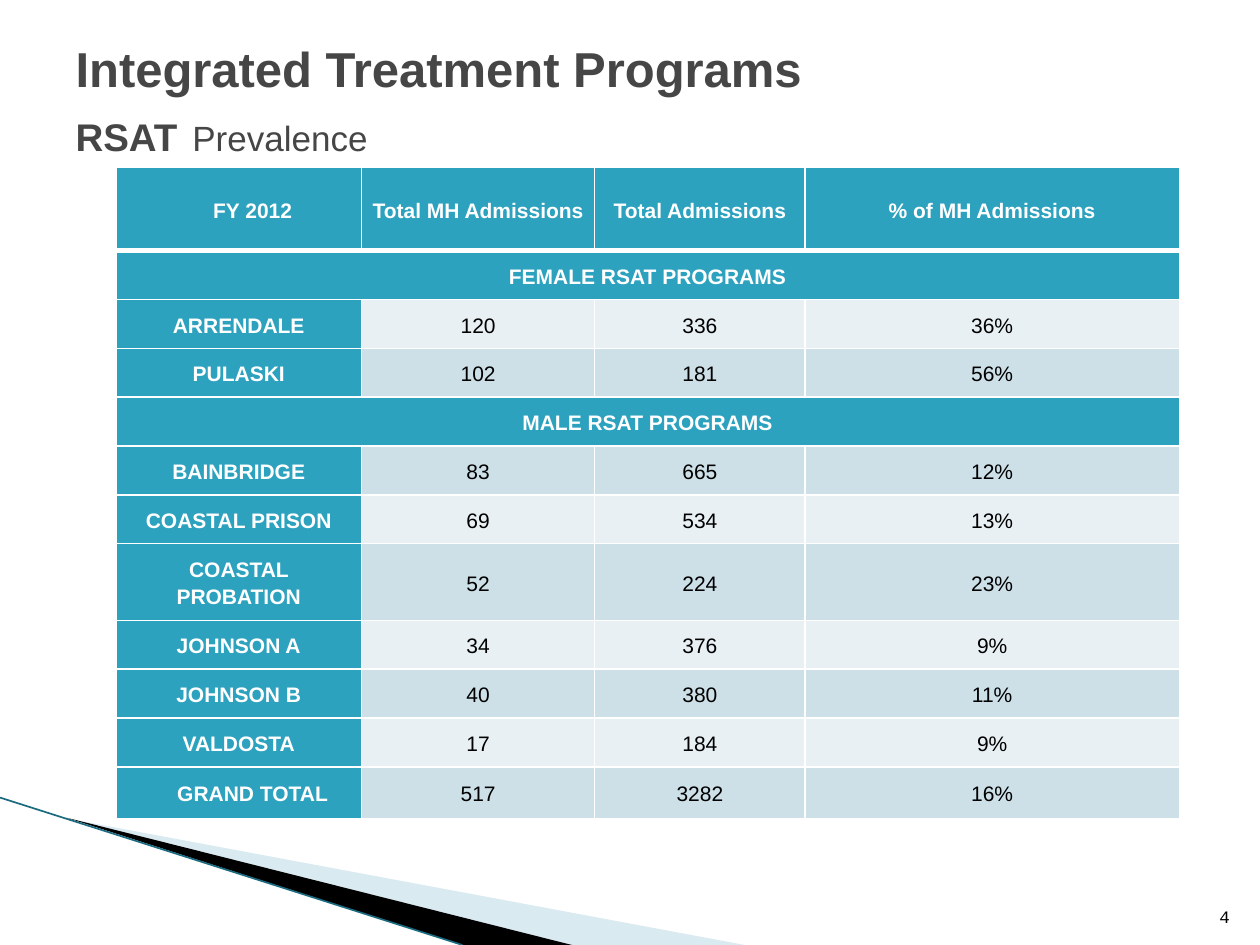
from lxml import etree
from pptx import Presentation
from pptx import util as u
from pptx.dml.color import RGBColor
from pptx.enum import shapes, text
from pptx.oxml.ns import qn

TEAL, WHITE, BLACK = "2DA2BF", "FFFFFF", "000000"
BANDS = ("E8F0F4", "CDE0E8")
COLS = (1.95, 1.85, 1.67, 2.97)
ROWS = (
    ("FY 2012", "Total MH Admissions", "Total Admissions", "% of MH Admissions"),
    ("FEMALE RSAT PROGRAMS",),
    ("ARRENDALE", "120", "336", "36%"),
    ("PULASKI", "102", "181", "56%"),
    ("MALE RSAT PROGRAMS",),
    ("BAINBRIDGE", "83", "665", "12%"),
    ("COASTAL PRISON", "69", "534", "13%"),
    ("COASTAL PROBATION", "52", "224", "23%"),
    ("JOHNSON A", "34", "376", "9%"),
    ("JOHNSON B", "40", "380", "11%"),
    ("VALDOSTA", "17", "184", "9%"),
    ("GRAND TOTAL", "517", "3282", "16%"),
)
HIGH = 5.17
TALL = {0: 0.66, 7: 0.61, 11: 0.41}
INDENTED = ("FY 2012", "GRAND TOTAL")


def paint(fmt, color):
    """Give a fill a solid colour."""
    fmt.solid()
    fmt.fore_color.rgb = RGBColor.from_string(color)


def style(run, size, color, bold=False, face="Arial"):
    """Set the font of a run."""
    font = run.font
    font.name, font.size, font.bold = face, u.Pt(size), bold
    font.color.rgb = RGBColor.from_string(color)


def wedge(slide, points, color, alpha=None):
    """Draw a filled outline through points in inches."""
    first, *rest = [(u.Inches(x), u.Inches(y)) for x, y in points]
    form = slide.shapes.build_freeform(*first)
    form.add_line_segments(rest, close=True)
    shape = form.convert_to_shape()
    shape.shadow.inherit = False
    shape.line.fill.background()
    paint(shape.fill, color)
    if alpha:
        tone = shape.fill._xPr.find(".//" + qn("a:srgbClr"))
        etree.SubElement(tone, qn("a:alpha"), val=str(alpha * 1000))


def rule(slide, start, end, color, width):
    """Draw a straight line between two points in inches."""
    ends = [u.Inches(n) for n in start + end]
    line = slide.shapes.add_connector(shapes.MSO_CONNECTOR.STRAIGHT, *ends)
    line.line.color.rgb = RGBColor.from_string(color)
    line.line.width = u.Pt(width)
    etree.SubElement(line._element.spPr, qn("a:effectLst"))


def border(cell, low):
    """Put white borders on a cell, with its own width for the bottom."""
    props = cell._tc.get_or_add_tcPr()
    for spot, side in enumerate("LRTB"):
        width = u.Pt(low if side == "B" else 1)
        edge = etree.Element(qn("a:ln" + side), w=str(width))
        solid = etree.SubElement(edge, qn("a:solidFill"))
        etree.SubElement(solid, qn("a:srgbClr"), val=WHITE)
        props.insert(spot, edge)


def write(cell, words, color, bold):
    """Fill a cell with centred text."""
    cell.vertical_anchor = text.MSO_ANCHOR.MIDDLE
    cell.margin_left = cell.margin_right = u.Inches(0.07)
    cell.margin_top = cell.margin_bottom = 0
    para = cell.text_frame.paragraphs[0]
    para.text = words
    para.alignment = text.PP_ALIGN.CENTER
    para.line_spacing = 1.15
    if words in INDENTED:
        para._p.get_or_add_pPr().set("indent", str(u.Inches(0.22)))
    style(para.runs[0], 12, color, bold)


def grid(slide):
    """Add the table of admissions."""
    even = (HIGH - sum(TALL.values())) / (len(ROWS) - len(TALL))
    box = [u.Inches(n) for n in (0.92, 1.33, sum(COLS), HIGH)]
    table = slide.shapes.add_table(len(ROWS), len(COLS), *box).table
    for col, wide in zip(table.columns, COLS):
        col.width = u.Inches(wide)
    for r, words in enumerate(ROWS):
        table.rows[r].height = u.Inches(TALL.get(r, even))
        for c in range(len(COLS)):
            cell = table.cell(r, c)
            head = r == 0 or c == 0 or len(words) == 1
            paint(cell.fill, TEAL if head else BANDS[r % 2])
            border(cell, 3 if r == 0 else 1)
            if c < len(words):
                write(cell, words[c], WHITE if head else BLACK, head)
        if len(words) == 1:
            table.cell(r, 0).merge(table.cell(r, len(COLS) - 1))


def title(slide):
    """Write the two lines of the title."""
    shape = slide.shapes.title
    shape.left, shape.top = u.Inches(0.5), u.Inches(0.17)
    shape.width, shape.height = u.Inches(9), u.Inches(1.25)
    frame = shape.text_frame
    frame.auto_size = text.MSO_AUTO_SIZE.NONE
    frame.vertical_anchor = text.MSO_ANCHOR.MIDDLE
    para = frame.paragraphs[0]
    para.alignment = text.PP_ALIGN.LEFT
    para.text = "Integrated Treatment Programs \v"
    style(para.runs[0], 28, "464646", True)
    for words, size, bold in (("RSAT", 22, True), (" ", 31, True), ("Prevalence", 20, False)):
        run = para.add_run()
        run.text = words
        style(run, size, "464646", bold)


def number(slide):
    """Add the page number."""
    box = [u.Inches(n) for n in (9.46, 7.01, 0.4, 0.4)]
    frame = slide.shapes.add_textbox(*box).text_frame
    frame.word_wrap = True
    frame.vertical_anchor = text.MSO_ANCHOR.BOTTOM
    para = frame.paragraphs[0]
    para.text = "4"
    para.alignment = text.PP_ALIGN.RIGHT
    style(para.runs[0], 10, BLACK, face="Courier New")


def main():
    """Build the slide and save it."""
    deck = Presentation()
    deck.slide_width, deck.slide_height = u.Inches(10), u.Inches(7.5)
    slide = deck.slides.add_slide(deck.slide_layouts[5])
    paint(slide.background.fill, WHITE)
    wedge(slide, [(0.55, 6.5), (5.91, 7.5), (4.54, 7.5)], "A0CBDC", 40)
    wedge(slide, [(0.53, 6.49), (4.54, 7.5), (3.67, 7.5)], BLACK)
    rule(slide, (0, 6.33), (3.67, 7.5), "1B6B80", 0.95)
    grid(slide)
    title(slide)
    number(slide)
    deck.save("out.pptx")


if __name__ == "__main__":
    main()
